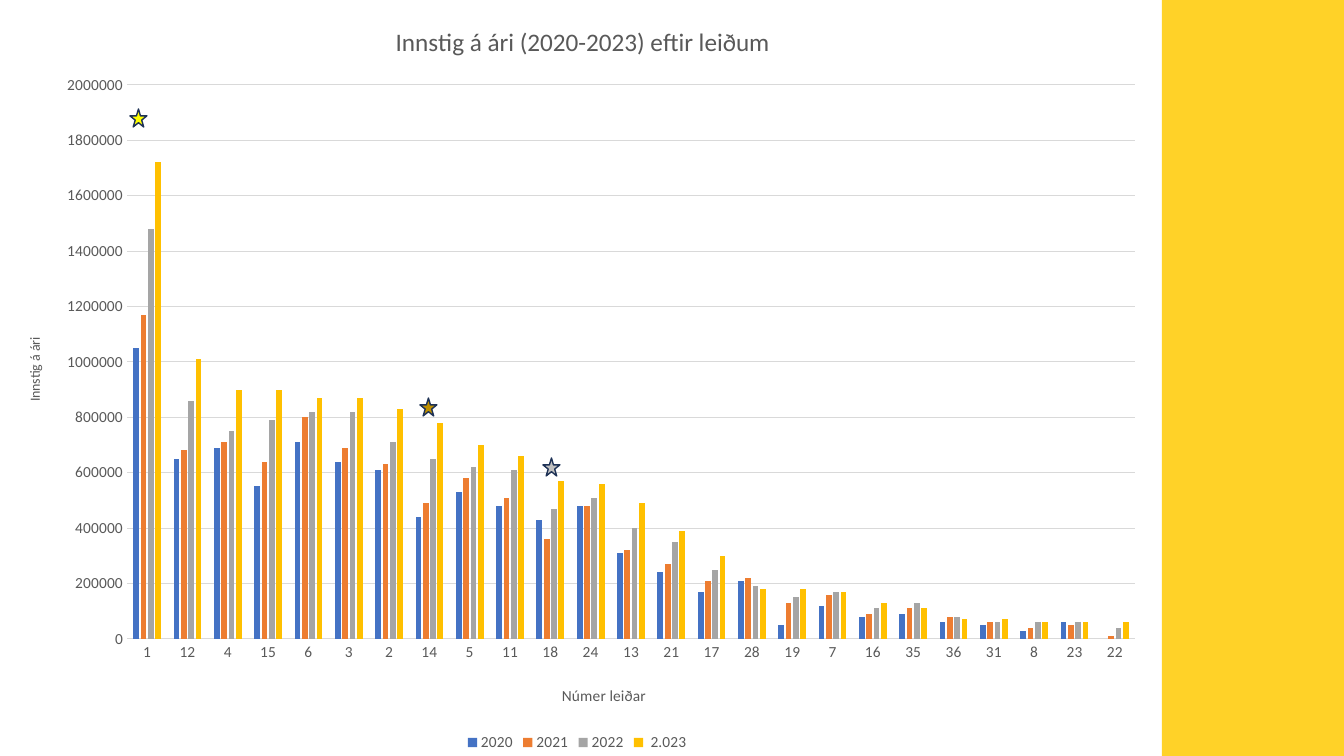
from lxml import etree
from pptx import Presentation
from pptx.chart.data import CategoryChartData
from pptx.dml.color import RGBColor
from pptx.enum.chart import XL_CHART_TYPE, XL_LEGEND_POSITION, XL_TICK_MARK
from pptx.enum.shapes import MSO_SHAPE
from pptx.oxml.ns import qn
from pptx.util import Emu, Pt

CLUSTERED = XL_CHART_TYPE.COLUMN_CLUSTERED
LEGEND_BOTTOM = XL_LEGEND_POSITION.BOTTOM
NO_TICK = XL_TICK_MARK.NONE
RECTANGLE = MSO_SHAPE.RECTANGLE
STAR = MSO_SHAPE.STAR_5_POINT

SLIDE_WIDTH, SLIDE_HEIGHT = 1344, 756
EMU_PER_PX = 12192000 / SLIDE_WIDTH
CHART_BOX = (0, 0, 1158, 756)
PANEL_BOX = (1162, 0, 182, 756)
PLOT_BOX = (127, 85, 1008, 554)
STAR_SIZE = (17, 18)
STARS = [(130, 109, "FFFF00"), (543, 458, "BFBFBF"), (420, 398, "BF9000")]

TEXT_COLOUR = "595959"
GRID_COLOUR = "D9D9D9"
STAR_OUTLINE = "1E3256"
PANEL_COLOUR = "FFD228"

ROUTES = [1, 12, 4, 15, 6, 3, 2, 14, 5, 11, 18, 24, 13, 21, 17, 28, 19, 7,
          16, 35, 36, 31, 8, 23, 22]
BOARDING_UNIT = 10000
BOARDINGS = [
    ("2020", "4472C4", [105, 65, 69, 55, 71, 64, 61, 44, 53, 48, 43, 48, 31,
                        24, 17, 21, 5, 12, 8, 9, 6, 5, 3, 6, None]),
    ("2021", "ED7D31", [117, 68, 71, 64, 80, 69, 63, 49, 58, 51, 36, 48, 32,
                        27, 21, 22, 13, 16, 9, 11, 8, 6, 4, 5, 1]),
    ("2022", "A5A5A5", [148, 86, 75, 79, 82, 82, 71, 65, 62, 61, 47, 51, 40,
                        35, 25, 19, 15, 17, 11, 13, 8, 6, 6, 6, 4]),
    (" 2.023 ", "FFC000", [172, 101, 90, 90, 87, 87, 83, 78, 70, 66, 57, 56, 49,
                           39, 30, 18, 18, 17, 13, 11, 7, 7, 6, 6, 6]),
]


def px(length):
    return Emu(round(length * EMU_PER_PX))


def colour(value):
    return RGBColor.from_string(value)


def apply(target, values):
    for name, value in values.items():
        setattr(target, name, value)


def format_font(font, size):
    apply(font, {"size": Pt(size), "name": "Calibri", "bold": False})
    font.color.rgb = colour(TEXT_COLOUR)


def format_line(line, value, width):
    line.color.rgb = colour(value)
    line.width = Pt(width)


def set_layout(parent, values):
    layout = parent.find(qn("c:layout"))
    if layout is None:
        layout = etree.Element(qn("c:layout"))
        parent.insert(0, layout)
    manual = etree.SubElement(layout, qn("c:manualLayout"))
    for name, value in values.items():
        etree.SubElement(manual, qn(f"c:{name}")).set("val", str(value))


def add_title(title, text, size, left, top, rotation=0):
    frame = title.text_frame
    frame.text = text
    format_font(frame.paragraphs[0].runs[0].font, size)
    frame._txBody.bodyPr.set("rot", str(rotation * 60000))
    frame._txBody.bodyPr.set("vert", "horz")
    set_layout(title._element, {
        "xMode": "edge", "yMode": "edge",
        "x": round(left / CHART_BOX[2], 4), "y": round(top / CHART_BOX[3], 4)})


def add_filled_shape(slide, kind, box, fill):
    shape = slide.shapes.add_shape(kind, *map(px, box))
    shape.shadow.inherit = False
    shape.fill.solid()
    shape.fill.fore_color.rgb = colour(fill)
    return shape


def add_panel(slide, box):
    add_filled_shape(slide, RECTANGLE, box, PANEL_COLOUR).line.fill.background()


def format_axes(chart):
    tick_format = {"major_tick_mark": NO_TICK, "minor_tick_mark": NO_TICK}
    for axis in (chart.category_axis, chart.value_axis):
        apply(axis, tick_format)
        format_font(axis.tick_labels.font, 11)
    format_line(chart.category_axis.format.line, GRID_COLOUR, 0.75)
    value_axis = chart.value_axis
    apply(value_axis, {"minimum_scale": 0, "maximum_scale": 2000000,
                       "major_unit": 200000, "has_major_gridlines": True})
    apply(value_axis.tick_labels, {"number_format": "0",
                                   "number_format_is_linked": False})
    value_axis.format.line.fill.background()
    format_line(value_axis.major_gridlines.format.line, GRID_COLOUR, 0.75)


def add_boardings_chart(slide, box):
    data = CategoryChartData()
    data.categories = [str(route) for route in ROUTES]
    for name, _, counts in BOARDINGS:
        data.add_series(name, [None if count is None else count * BOARDING_UNIT
                               for count in counts])
    chart = slide.shapes.add_chart(CLUSTERED, *map(px, box), data).chart
    format_font(chart.font, 10)

    plot = chart.plots[0]
    apply(plot, {"gap_width": 219, "overlap": -27, "vary_by_categories": False})
    for series, (_, fill, _) in zip(plot.series, BOARDINGS):
        series.format.fill.solid()
        series.format.fill.fore_color.rgb = colour(fill)

    format_axes(chart)
    add_title(chart.chart_title, "Innstig á ári (2020-2023) eftir leiðum", 18, 391, 20)
    add_title(chart.category_axis.axis_title, "Númer leiðar", 11, 559, 682)
    add_title(chart.value_axis.axis_title, "Innstig á ári", 10, 23, 335, -90)

    chart.has_legend = True
    apply(chart.legend, {"position": LEGEND_BOTTOM, "include_in_layout": False})
    format_font(chart.legend.font, 11)

    left, top, width, height = PLOT_BOX
    set_layout(chart._chartSpace.chart.plotArea, {
        "layoutTarget": "inner", "xMode": "edge", "yMode": "edge",
        "x": round(left / box[2], 4), "y": round(top / box[3], 4),
        "w": round(width / box[2], 4), "h": round(height / box[3], 4)})


def add_stars(slide):
    for left, top, fill in STARS:
        star = add_filled_shape(slide, STAR, (left, top, *STAR_SIZE), fill)
        format_line(star.line, STAR_OUTLINE, 1)


def main():
    presentation = Presentation()
    apply(presentation, {"slide_width": px(SLIDE_WIDTH),
                         "slide_height": px(SLIDE_HEIGHT)})
    slide = presentation.slides.add_slide(presentation.slide_layouts[6])
    add_panel(slide, PANEL_BOX)
    add_boardings_chart(slide, CHART_BOX)
    add_stars(slide)
    presentation.save("out.pptx")


if __name__ == "__main__":
    main()
